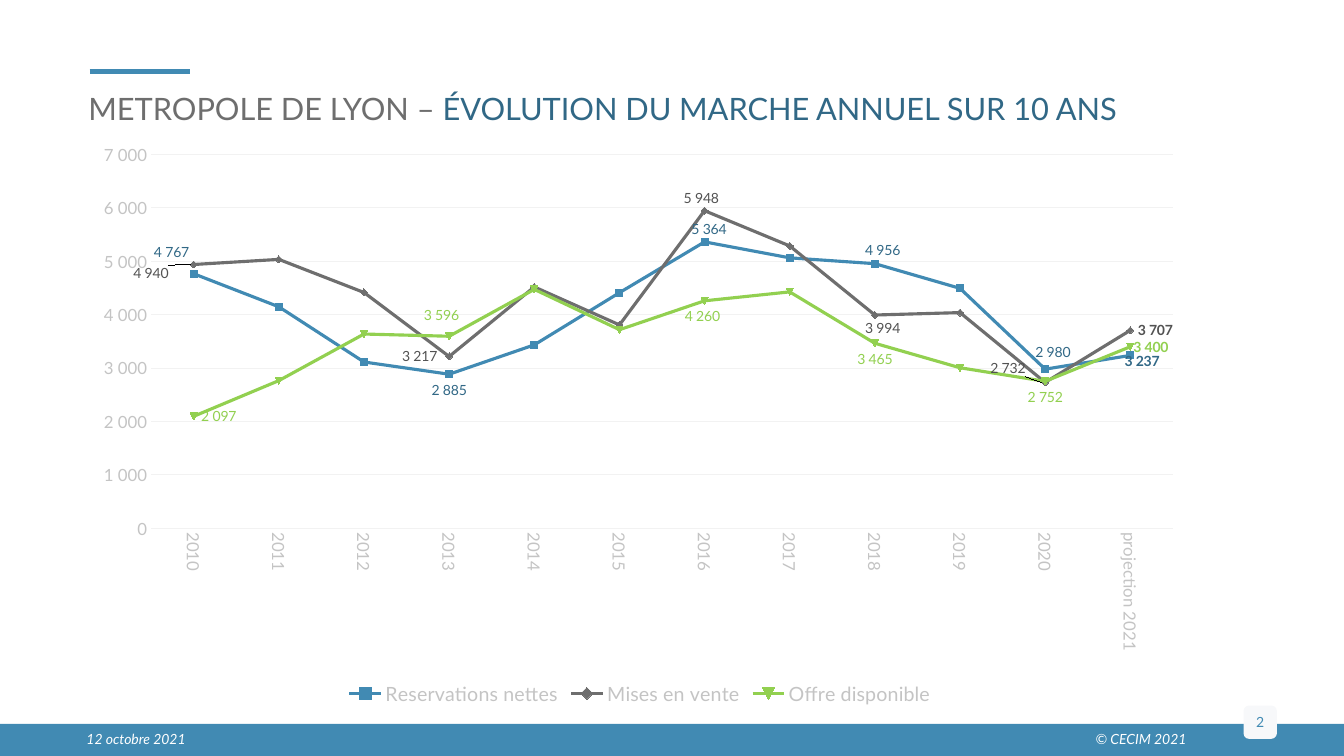
"""Build the slide on the yearly housing market of the Lyon metropolis."""
from dataclasses import dataclass
from typing import Any

from lxml.etree import SubElement
from pptx import Presentation
from pptx.chart.data import CategoryChartData
from pptx.dml.color import RGBColor
from pptx.enum.chart import XL_CHART_TYPE, XL_LABEL_POSITION, XL_LEGEND_POSITION, XL_TICK_MARK
from pptx.enum.shapes import MSO_CONNECTOR, MSO_SHAPE
from pptx.enum.text import MSO_ANCHOR, PP_ALIGN
from pptx.oxml import parse_xml
from pptx.oxml.ns import nsdecls, qn
from pptx.util import Cm, Pt

BLUE = RGBColor(0x41, 0x8A, 0xB3)
DARK_BLUE = RGBColor(0x31, 0x68, 0x86)
GREY = RGBColor(0x6E, 0x6E, 0x6E)
DARK_GREY = RGBColor(0x52, 0x52, 0x52)
GREEN = RGBColor(0x92, 0xD0, 0x50)
AXIS_GREY = RGBColor(0xC4, 0xC4, 0xC4)
CHART_GREY = RGBColor(0xA5, 0xA5, 0xA5)
GRID_GREY = RGBColor(0xF2, 0xF2, 0xF2)
PALE = RGBColor(0xF7, 0xF8, 0xFA)
WHITE = RGBColor(0xFF, 0xFF, 0xFF)

FONT = "Lato"
NUMBER_FORMAT = "###\\ ##0"
YEARS = [str(year) for year in range(2010, 2021)] + ["projection 2021"]
ABOVE, BELOW = XL_LABEL_POSITION.ABOVE, XL_LABEL_POSITION.BELOW
LEFT, RIGHT = XL_LABEL_POSITION.LEFT, XL_LABEL_POSITION.RIGHT


@dataclass
class Label:
    """A value label, shifted by fractions of the chart size."""
    point: int
    position: XL_LABEL_POSITION
    shift_x: float = 0
    shift_y: float = 0


@dataclass
class MarketSeries:
    """A line of the chart with its labels."""
    name: str
    values: list[int]
    color: RGBColor
    label_color: RGBColor
    labels: list[Label]


@dataclass
class TextItem:
    """A text box made of coloured runs."""
    left: float
    top: float
    width: float
    height: float
    runs: list[tuple[str, RGBColor]]
    size: int
    italic: bool = False
    alignment: PP_ALIGN = PP_ALIGN.LEFT
    anchor: MSO_ANCHOR = MSO_ANCHOR.TOP


SERIES = [
    MarketSeries(
        "Reservations nettes",
        [4767, 4148, 3114, 2885, 3435, 4412, 5364, 5065, 4956, 4493, 2980, 3237],
        BLUE, DARK_BLUE,
        [Label(0, ABOVE, -0.02, -0.01), Label(3, BELOW), Label(6, ABOVE, 0.004, 0.006),
         Label(8, ABOVE, 0.007, 0.004), Label(10, ABOVE, 0.007, -0.002),
         Label(11, RIGHT, -0.012, 0.01)]),
    MarketSeries(
        "Mises en vente",
        [4940, 5036, 4416, 3217, 4520, 3809, 5948, 5288, 3994, 4039, 2732, 3707],
        GREY, DARK_GREY,
        [Label(0, LEFT, -0.016, 0.016), Label(3, LEFT, -0.004), Label(6, ABOVE, -0.003, 0.006),
         Label(8, BELOW, 0.007, -0.004), Label(10, LEFT, -0.011, -0.025), Label(11, RIGHT)]),
    MarketSeries(
        "Offre disponible",
        [2097, 2765, 3638, 3596, 4474, 3719, 4260, 4427, 3465, 3006, 2752, 3400],
        GREEN, GREEN,
        [Label(0, RIGHT), Label(3, ABOVE, -0.007, -0.01), Label(6, BELOW, -0.002),
         Label(8, BELOW), Label(10, BELOW), Label(11, RIGHT, -0.004)]),
]

TEXTS = [
    TextItem(1.98, 1.14, 30.96, 3.18,
             [("METROPOLE DE LYON – ", GREY), ("ÉVOLUTION DU MARCHE ANNUEL SUR 10 ANS", DARK_BLUE)],
             22, anchor=MSO_ANCHOR.MIDDLE),
    TextItem(15.47, 18.29, 14.68, 0.69, [("© CECIM 2021", WHITE)], 10, True, PP_ALIGN.RIGHT),
    TextItem(1.93, 18.29, 7.9, 0.69, [("12 octobre 2021", WHITE)], 10, True),
]


def format_font(font: Any, size: int, color: RGBColor, **formats: bool) -> None:
    """Apply the slide font and the given format values."""
    for name, value in {"name": FONT, "size": Pt(size), **formats}.items():
        setattr(font, name, value)
    font.color.rgb = color


def format_line(line: Any, color: RGBColor, width: float) -> None:
    """Give a line its colour and width."""
    line.color.rgb = color
    line.width = Pt(width)


def fill_text(shape: Any, item: TextItem) -> None:
    """Write the runs of a text item into a shape."""
    frame = shape.text_frame
    frame.word_wrap = True
    frame.vertical_anchor = item.anchor
    paragraph = frame.paragraphs[0]
    paragraph.alignment = item.alignment
    for text, color in item.runs:
        run = paragraph.add_run()
        run.text = text
        format_font(run.font, item.size, color, italic=item.italic)


def add_block(slide: Any, kind: MSO_SHAPE, box: tuple, color: RGBColor) -> Any:
    """Add a plain filled shape."""
    shape = slide.shapes.add_shape(kind, *map(Cm, box))
    shape.shadow.inherit = False
    shape.fill.solid()
    shape.fill.fore_color.rgb = color
    shape.line.fill.background()
    return shape


def manual_layout(**values: Any) -> Any:
    """Make a manual chart layout element."""
    children = "".join(f'<c:{name} val="{value}"/>' for name, value in values.items())
    return parse_xml(f'<c:layout {nsdecls("c")}><c:manualLayout>{children}</c:manualLayout></c:layout>')


def format_series(series: Any, market: MarketSeries) -> None:
    """Style a chart line and place its labels."""
    series.smooth = False
    series.marker.style = None
    format_line(series.format.line, market.color, 2.25)
    series.data_labels.show_value = False
    for label in market.labels:
        data_label = series.points[label.point].data_label
        format_font(data_label.font, 10, market.label_color, bold=label.point == len(YEARS) - 1)
        data_label.position = label.position
    shifts = {str(label.point): label for label in market.labels if label.shift_x or label.shift_y}
    for element in series.data_labels._element.findall(qn("c:dLbl")):
        label = shifts.get(element[0].get("val"))
        if label:
            element.insert(1, manual_layout(x=label.shift_x, y=label.shift_y))


def add_market_chart(slide: Any) -> None:
    """Add the line chart of the three market series."""
    data = CategoryChartData(number_format=NUMBER_FORMAT)
    data.categories = YEARS
    for market in SERIES:
        data.add_series(market.name, market.values)
    box = map(Cm, (2.13, 3.61, 27.99, 14.27))
    chart = slide.shapes.add_chart(XL_CHART_TYPE.LINE, *box, data).chart
    format_font(chart.font, 10, CHART_GREY)
    chart.has_title = False
    chart.has_legend = True
    chart.legend.position = XL_LEGEND_POSITION.BOTTOM
    chart.legend.include_in_layout = False
    format_font(chart.legend.font, 14, AXIS_GREY)
    for axis in (chart.category_axis, chart.value_axis):
        axis.major_tick_mark = axis.minor_tick_mark = XL_TICK_MARK.NONE
        format_font(axis.tick_labels.font, 12, AXIS_GREY)
    format_line(chart.category_axis.format.line, GRID_GREY, 0.75)
    text_body = chart.category_axis._element.find(qn("c:txPr")).find(qn("a:bodyPr"))
    text_body.set("rot", "5400000")
    text_body.set("vert", "horz")
    value_axis = chart.value_axis
    value_axis.minimum_scale, value_axis.maximum_scale, value_axis.major_unit = 0, 7000, 1000
    value_axis.format.line.fill.background()
    format_line(value_axis.major_gridlines.format.line, GRID_GREY, 0.75)
    value_axis.tick_labels.number_format = NUMBER_FORMAT
    value_axis.tick_labels.number_format_is_linked = False
    plot = chart.plots[0]
    plot.vary_by_categories = False
    for series, market in zip(plot.series, SERIES):
        format_series(series, market)
    plot_area = plot._element.getparent()
    for layout in plot_area.findall(qn("c:layout")):
        plot_area.remove(layout)
    plot_area.insert(0, manual_layout(layoutTarget="inner", xMode="edge", yMode="edge",
                                      x=0.06, y=0.02, w=0.92, h=0.66))


def main() -> None:
    """Build and save the presentation."""
    presentation = Presentation()
    presentation.slide_width, presentation.slide_height = Cm(33.87), Cm(19.05)
    slide = presentation.slides.add_slide(presentation.slide_layouts[6])
    add_block(slide, MSO_SHAPE.RECTANGLE, (0, 18.24, 33.87, 0.81), BLUE)
    accent = slide.shapes.add_connector(MSO_CONNECTOR.STRAIGHT, *map(Cm, (2.26, 1.8, 4.8, 1.8)))
    format_line(accent.line, BLUE, 3.5)
    SubElement(accent._element.spPr, qn("a:effectLst"))
    badge_box = (31.34, 17.78, 0.84, 0.84)
    badge = add_block(slide, MSO_SHAPE.ROUNDED_RECTANGLE, badge_box, PALE)
    badge.text_frame.margin_left = badge.text_frame.margin_right = 0
    fill_text(badge, TextItem(*badge_box, [("2", BLUE)], 10, False, PP_ALIGN.CENTER, MSO_ANCHOR.MIDDLE))
    for item in TEXTS:
        box = map(Cm, (item.left, item.top, item.width, item.height))
        fill_text(slide.shapes.add_textbox(*box), item)
    add_market_chart(slide)
    presentation.save("out.pptx")


if __name__ == "__main__":
    main()
